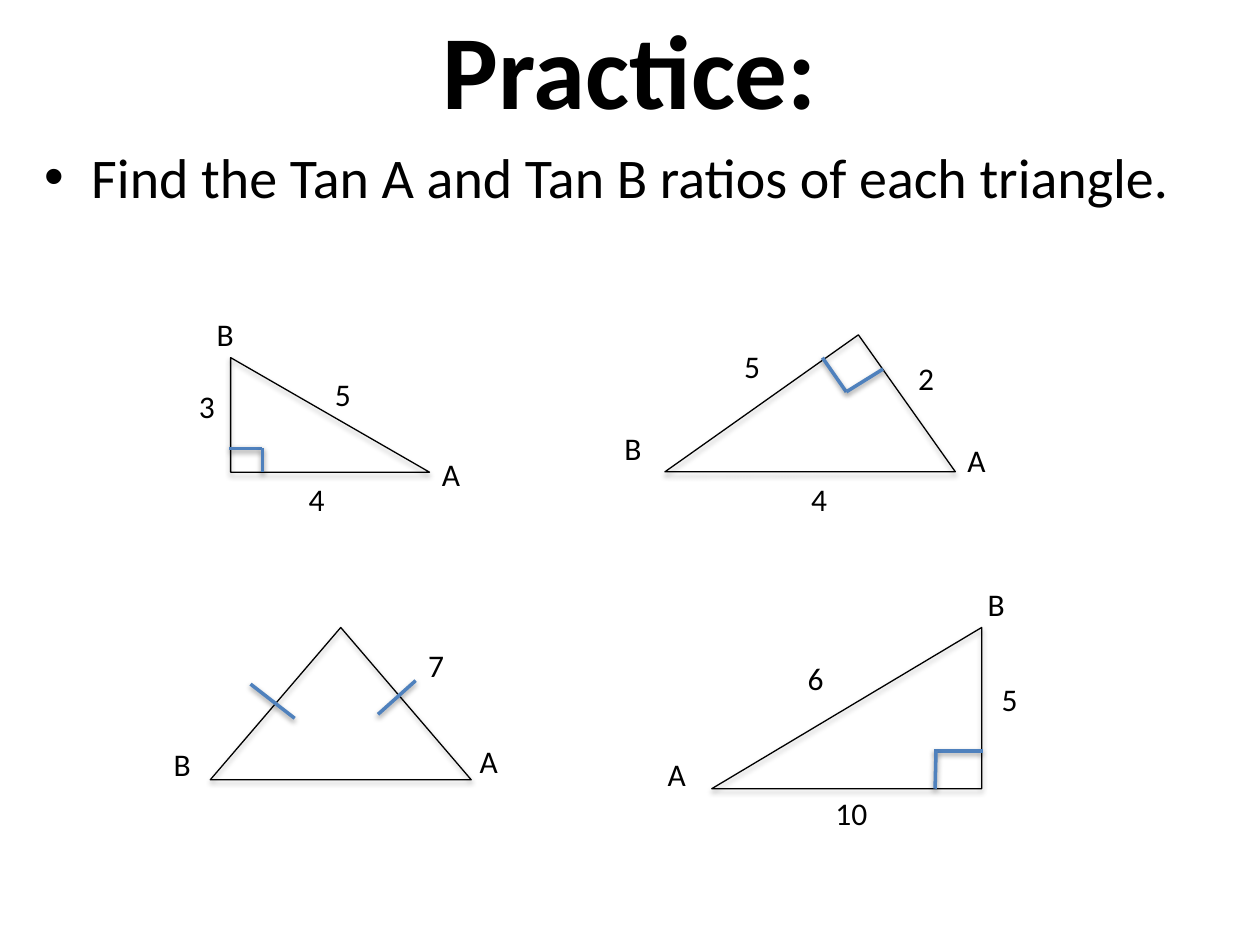
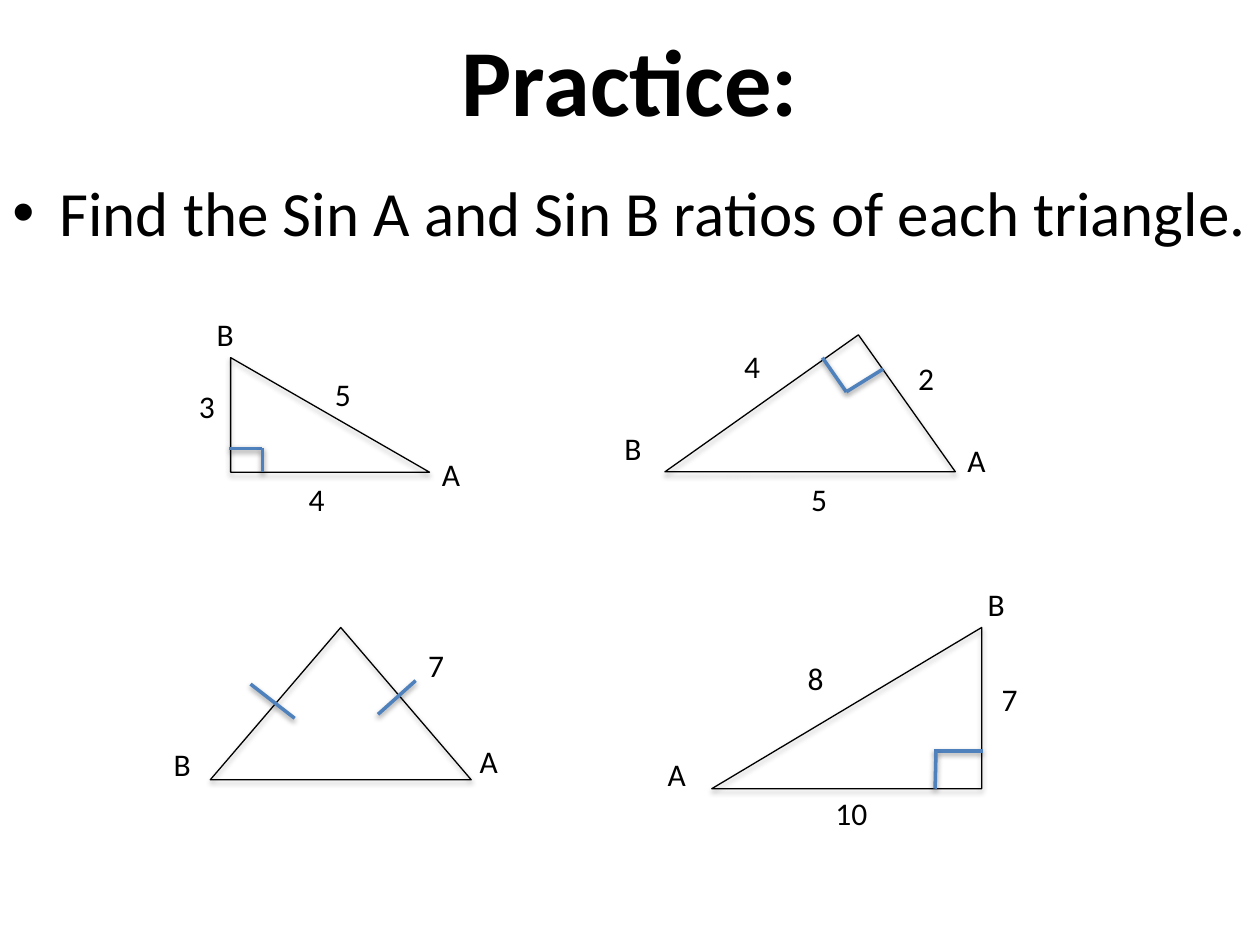
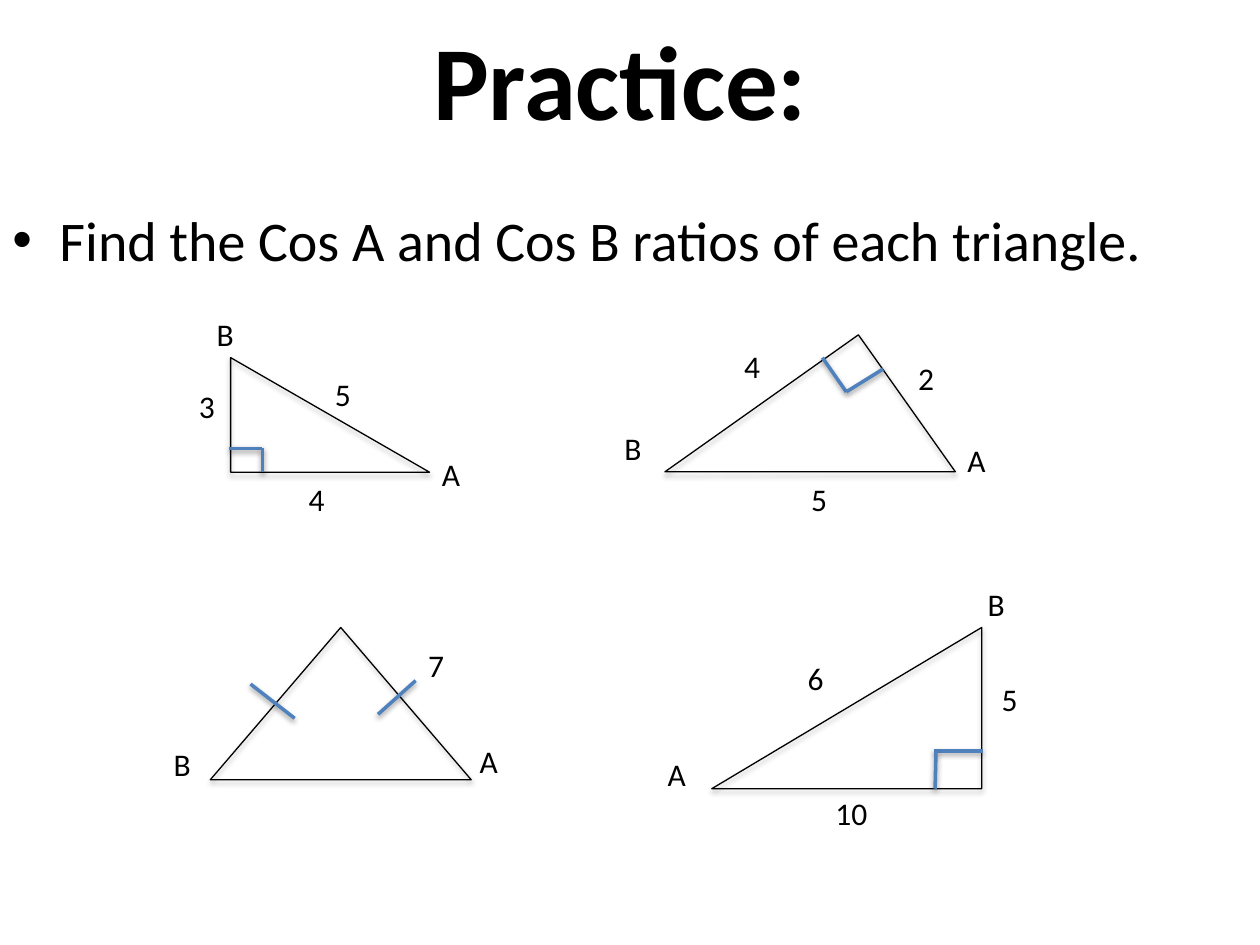
from lxml import etree
from pptx import Presentation
from pptx.dml.color import RGBColor
from pptx.enum.shapes import MSO_CONNECTOR, MSO_SHAPE
from pptx.enum.text import MSO_ANCHOR, MSO_AUTO_SIZE, PP_ALIGN
from pptx.oxml.ns import qn
from pptx.util import Cm, Pt

STRAIGHT = MSO_CONNECTOR.STRAIGHT
RIGHT_TRIANGLE = MSO_SHAPE.RIGHT_TRIANGLE
TRIANGLE = MSO_SHAPE.ISOSCELES_TRIANGLE
TOP, MIDDLE = MSO_ANCHOR.TOP, MSO_ANCHOR.MIDDLE
LEFT, CENTER = PP_ALIGN.LEFT, PP_ALIGN.CENTER
NO_FIT, GROW = MSO_AUTO_SIZE.NONE, MSO_AUTO_SIZE.SHAPE_TO_FIT_TEXT

FONT = "Calibri"
BLACK, BLUE = "000000", "4F81BD"
LABEL_W, LABEL_H = 0.98, 1.02
BULLET_INDENT = 0.95

FIGURES = {
    "legs": {
        "box": (4.65, 7.21, 4.01, 2.31),
        "outline": RIGHT_TRIANGLE,
        "marks": [((-0.03, 1.83), (0.64, 1.83)), ((0.64, 1.83), (0.64, 2.31))],
        "labels": [(4.01, 1.83), (-0.53, -0.99), (-0.89, 0.46), (1.85, 0.23), (1.32, 2.34)],
    },
    "tilted": {
        "box": (13.94, 7.82, 4.78, 3.38),
        "outline": RIGHT_TRIANGLE,
        "rotation": 144.7,
        "marks": [((2.64, -0.61), (3.12, 0.08)), ((3.12, 0.08), (3.86, -0.38))],
        "labels": [(5.31, 0.94), (-1.6, 0.71), (4.32, -0.71), (0.81, -0.94), (2.16, 1.73)],
    },
    "isosceles": {
        "box": (4.24, 12.65, 5.26, 3.07),
        "outline": TRIANGLE,
        "marks": [((3.38, 1.75), (4.14, 1.07)), ((1.7, 1.83), (0.81, 1.14))],
        "labels": [(5.18, 2.18), (-0.99, 2.24), (4.14, 0.25)],
    },
    "slope": {
        "box": (14.35, 12.65, 5.44, 3.25),
        "outline": TRIANGLE,
        "apex": 1,
        "marks": [((5.46, 2.49), (4.47, 2.49)), ((4.52, 2.49), (4.5, 3.25))],
        "labels": [(-1.14, 2.44), (5.31, -0.99), (1.68, 0.51), (2.24, 3.23), (5.59, 0.94)],
    },
}

SLIDES = [
    {
        "ratio": "Tan",
        "title": (1.27, 0, 22.86, 2.74), "title_size": 60,
        "task": (0.64, 2.74, 23.93, 1.85), "task_size": 32,
        "sides": {"legs": "3 5 4", "tilted": "2 5 4", "isosceles": "7", "slope": "6 10 5"},
    },
    {
        "ratio": "Sin",
        "title": (1.27, 0, 22.86, 3.18), "title_size": 54,
        "task": (0, 3.38, 25.4, 1.85), "task_size": 36,
        "sides": {"legs": "3 5 4", "tilted": "2 4 5", "isosceles": "7", "slope": "8 10 7"},
    },
    {
        "ratio": "Cos",
        "title": (1.07, 0, 22.86, 3.18), "title_size": 60,
        "task": (0, 4.01, 25.4, 1.85), "task_size": 32,
        "sides": {"legs": "3 5 4", "tilted": "2 4 5", "isosceles": "7", "slope": "6 10 5"},
    },
]


def rgb(value):
    return RGBColor.from_string(value)


def set_all(target, values):
    for name, value in values.items():
        setattr(target, name, value)


def add_element(parent, tag, **attributes):
    return etree.SubElement(parent, qn(tag), attributes)


def add_text(slide, box, text, size, bold=False, align=LEFT, anchor=TOP, fit=NO_FIT):
    sp = slide.shapes.add_textbox(*map(Cm, box))
    tf = sp.text_frame
    set_all(tf, {"word_wrap": True, "auto_size": fit, "vertical_anchor": anchor})
    p = tf.paragraphs[0]
    p.alignment = align
    r = p.add_run()
    r.text = text
    set_all(r.font, {"name": FONT, "size": Pt(size), "bold": bold})
    r.font.color.rgb = rgb(BLACK)
    return p


def add_title(slide, box, size):
    add_text(slide, box, "Practice:", size, bold=True, align=CENTER, anchor=MIDDLE)


def add_task(slide, box, ratio, size):
    text = f"Find the {ratio} A and {ratio} B ratios of each triangle."
    pPr = add_text(slide, box, text, size)._p.get_or_add_pPr()
    pPr.set("marL", str(Cm(BULLET_INDENT)))
    pPr.set("indent", str(-Cm(BULLET_INDENT)))
    add_element(add_element(pPr, "a:spcBef"), "a:spcPct", val="20000")
    add_element(pPr, "a:buFont", typeface="Arial")
    add_element(pPr, "a:buChar", char="•")


def set_stroke(sp, color, width, distance, opacity):
    sp.line.color.rgb = rgb(color)
    sp.line.width = Pt(width)
    spPr = sp._element.spPr
    effects = spPr.find(qn("a:effectLst"))
    if effects is None:
        effects = add_element(spPr, "a:effectLst")
    shadow = add_element(effects, "a:outerShdw", blurRad=str(Pt(3.1)),
                         dist=str(Pt(distance)), dir="5400000", rotWithShape="0")
    shade = add_element(shadow, "a:srgbClr", val=BLACK)
    add_element(shade, "a:alpha", val=str(opacity * 1000))


def add_figure(slide, figure, sides):
    left, top, width, height = figure["box"]
    sp = slide.shapes.add_shape(figure["outline"], *map(Cm, figure["box"]))
    sp.shadow.inherit = False
    sp.fill.background()
    sp.rotation = figure.get("rotation", 0)
    if "apex" in figure:
        sp.adjustments[0] = figure["apex"]
    set_stroke(sp, BLACK, 0.75, 1.8, 35)
    for (x1, y1), (x2, y2) in figure["marks"]:
        ends = (left + x1, top + y1, left + x2, top + y2)
        mark = slide.shapes.add_connector(STRAIGHT, *map(Cm, ends))
        set_stroke(mark, BLUE, 2, 1.6, 38)
    for text, (x, y) in zip(["A", "B", *sides.split()], figure["labels"]):
        label_w = LABEL_W if len(text) == 1 else 1.68
        add_text(slide, (left + x, top + y, label_w, LABEL_H), text, 18, fit=GROW)


def main():
    prs = Presentation()
    set_all(prs, {"slide_width": Cm(25.4), "slide_height": Cm(19.05)})
    for content in SLIDES:
        slide = prs.slides.add_slide(prs.slide_layouts[6])
        add_title(slide, content["title"], content["title_size"])
        add_task(slide, content["task"], content["ratio"], content["task_size"])
        for name, figure in FIGURES.items():
            add_figure(slide, figure, content["sides"][name])
    prs.save("out.pptx")


if __name__ == "__main__":
    main()
